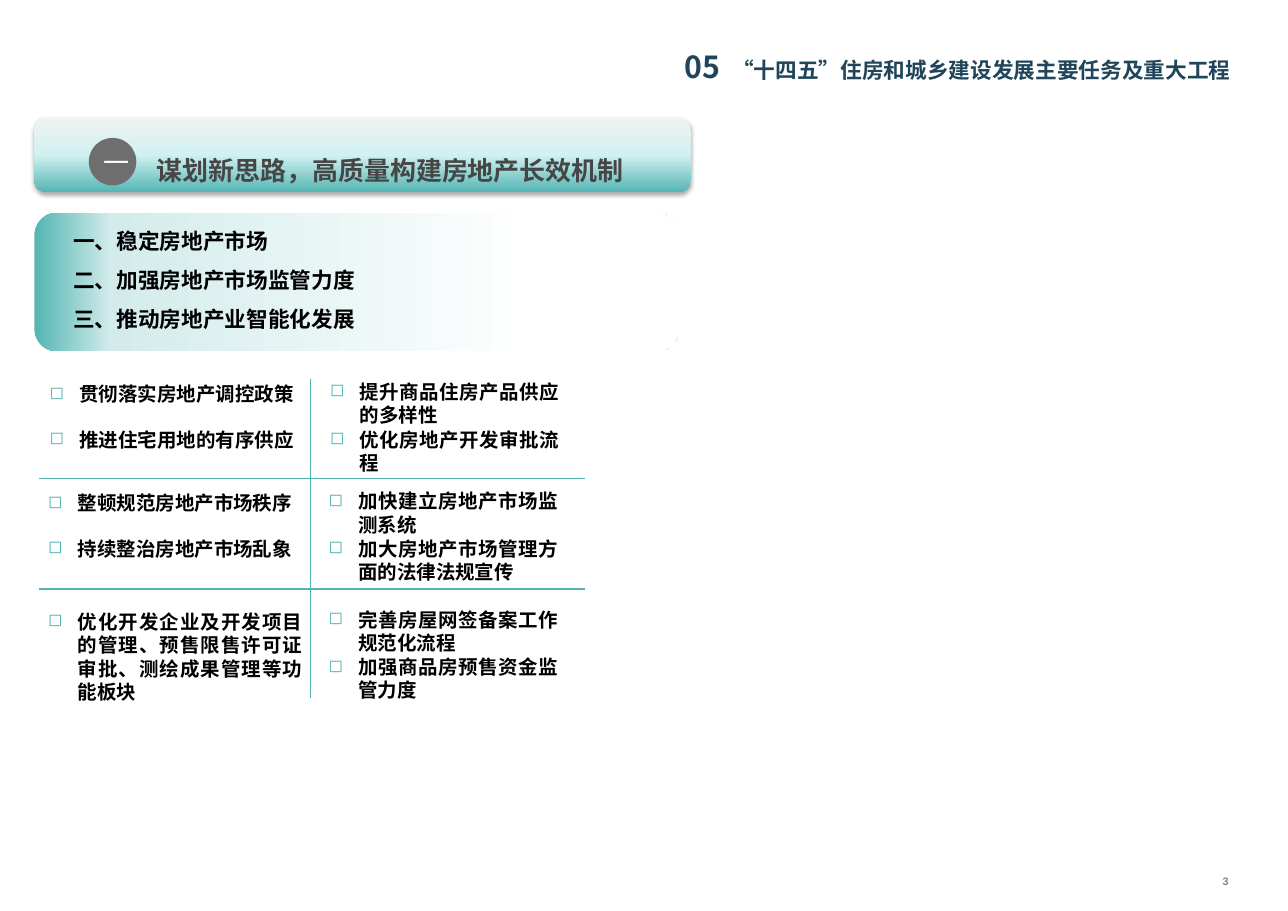
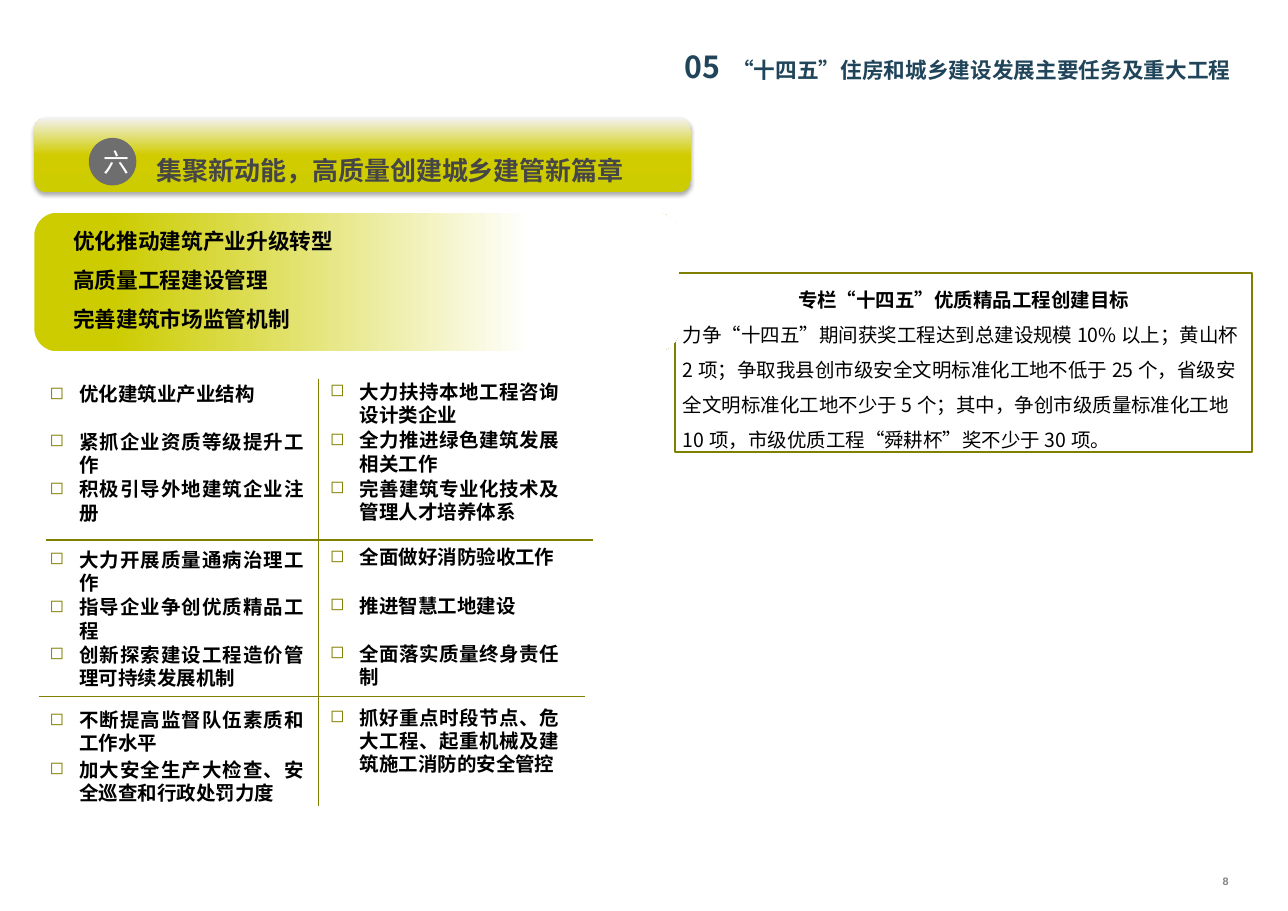
from dataclasses import dataclass
from typing import Any

from lxml.etree import SubElement
from pptx import Presentation
from pptx.dml.color import RGBColor
from pptx.enum.lang import MSO_LANGUAGE_ID
from pptx.enum.shapes import MSO_CONNECTOR, MSO_SHAPE
from pptx.enum.text import MSO_ANCHOR, MSO_AUTO_SIZE, PP_ALIGN
from pptx.oxml.ns import qn
from pptx.util import Inches, Pt

# Shared style; the page is A3, 420 by 297 millimetres
WIDE, HIGH = 420 / 25.4, 297 / 25.4
SANS, LATIN = "Noto Sans CJK SC", "Calibri"
NAVY, GRAY, DARK = "20455A", "6E6E6E", "464646"
BLACK, WHITE, PALE = "000000", "FFFFFF", "F2F2F2"
HEAD = "“十四五”住房和城乡建设发展主要任务及重大工程"
LEFT_WIDE, RIGHT_WIDE, SHIFT = 3.46, 3.14, 3.6
RISE, HANG = 0.03, 0.38

Rect = tuple[float, float, float, float]
Stops = list[tuple[int, str]]


@dataclass
class Run:
    text: str
    size: float
    color: str = BLACK
    bold: bool = True
    font: str = SANS


@dataclass
class Block:
    x: float
    top: float
    step: float
    gap: float
    left: list[str]
    right: list[str]


@dataclass
class Page:
    number: str
    mark: str
    title: str
    points: list[str]
    main: str
    band: Stops
    panel: Stops
    weight: float
    lines: list[Rect]
    blocks: list[Block]
    note: tuple[str, str] | None = None


PAGES = [
    Page(
        "3", "一", "谋划新思路，高质量构建房地产长效机制",
        ["一、稳定房地产市场", "二、加强房地产市场监管力度", "三、推动房地产业智能化发展"],
        "53B5B3",
        [(0, "53B5B3"), (50, "D1F1F1"), (100, PALE)],
        [(0, "53B5B3"), (12, "D3ECEB"), (77, WHITE)],
        1,
        [(0.5, 6.14, 7.51, 6.14), (3.99, 4.86, 3.99, 8.96), (0.5, 7.56, 7.51, 7.56)],
        [
            Block(0.54, 4.86, 0.58, 0.61,
                  ["贯彻落实房地产调控政策", "推进住宅用地的有序供应"],
                  ["提升商品住房产品供应的多样性", "优化房地产开发审批流程"]),
            Block(0.52, 6.26, 0.58, 0.61,
                  ["整顿规范房地产市场秩序", "持续整治房地产市场乱象"],
                  ["加快建立房地产市场监测系统", "加大房地产市场管理方面的法律法规宣传"]),
            Block(0.52, 7.78, 0.58, 0.61,
                  ["优化开发企业及开发项目的管理、预售限售许可证审批、测绘成果管理等功能板块"],
                  ["完善房屋网签备案工作规范化流程", "加强商品房预售资金监管力度"]),
        ],
    ),
    Page(
        "8", "六", "集聚新动能，高质量创建城乡建管新篇章",
        ["优化推动建筑产业升级转型", "高质量工程建设管理", "完善建筑市场监管机制"],
        "808000",
        [(0, "CCCC00"), (50, "D1CC00"), (100, PALE)],
        [(0, "CCCC00"), (12, "CCCC00"), (77, WHITE)],
        1.25,
        [(0.59, 6.93, 7.61, 6.93), (4.09, 4.86, 4.09, 10.35), (0.5, 8.94, 7.51, 8.94)],
        [
            Block(0.54, 4.86, 0.61, 0.62,
                  ["优化建筑业产业结构", "紧抓企业资质等级提升工作", "积极引导外地建筑企业注册"],
                  ["大力扶持本地工程咨询设计类企业", "全力推进绿色建筑发展相关工作",
                   "完善建筑专业化技术及管理人才培养体系"]),
            Block(0.54, 6.98, 0.61, 0.62,
                  ["大力开展质量通病治理工作", "指导企业争创优质精品工程",
                   "创新探索建设工程造价管理可持续发展机制"],
                  ["全面做好消防验收工作", "推进智慧工地建设", "全面落实质量终身责任制"]),
            Block(0.54, 9.04, 0.64, 0.62,
                  ["不断提高监督队伍素质和工作水平", "加大安全生产大检查、安全巡查和行政处罚力度"],
                  ["抓好重点时段节点、危大工程、起重机械及建筑施工消防的安全管控"]),
        ],
        ("专栏“十四五”优质精品工程创建目标",
         "力争“十四五”期间获奖工程达到总建设规模10%以上；黄山杯2项；"
         "争取我县创市级安全文明标准化工地不低于25个，省级安全文明标准化工地不少于5个；"
         "其中，争创市级质量标准化工地10项，市级优质工程“舜耕杯”奖不少于30项。"),
    ),
]


def paint(target: Any, color: str) -> None:
    target.rgb = RGBColor.from_string(color)


def apply(target: Any, form: dict[str, Any]) -> None:
    for name, value in form.items():
        setattr(target, name, value)


def node(parent: Any, tag: str, **values: Any) -> Any:
    return SubElement(parent, qn(tag), {key: str(val) for key, val in values.items()})


# Text
def write(para: Any, runs: list[Run], **form: Any) -> None:
    apply(para, form)
    for part in runs:
        run = para.add_run()
        run.text = part.text
        apply(run.font, {"size": Pt(part.size), "bold": part.bold, "name": part.font,
                         "language_id": MSO_LANGUAGE_ID.SIMPLIFIED_CHINESE})
        paint(run.font.color, part.color)
        node(run.font._element, "a:ea", typeface=SANS)


def fill_text(shape: Any, paras: list[list[Run]], frame: dict[str, Any], **form: Any) -> Any:
    body = shape.text_frame
    apply(body, {"word_wrap": True, "vertical_anchor": MSO_ANCHOR.TOP, **frame})
    for i, runs in enumerate(paras):
        write(body.add_paragraph() if i else body.paragraphs[0], runs, **form)
    return body


def label(slide: Any, at: Rect, paras: list[list[Run]],
          frame: dict[str, Any] | None = None, **form: Any) -> Any:
    box = slide.shapes.add_textbox(*map(Inches, at))
    grow = {"auto_size": MSO_AUTO_SIZE.SHAPE_TO_FIT_TEXT}
    return fill_text(box, paras, grow if frame is None else frame, **form)


def item(slide: Any, x: float, y: float, wide: float, text: str, color: str) -> None:
    body = label(slide, (x, y, wide, 0.4), [[Run(text, 18, font=LATIN)]],
                 alignment=PP_ALIGN.JUSTIFY)
    props = body.paragraphs[0]._p.get_or_add_pPr()
    for key, value in {"marL": Inches(HANG), "indent": -Inches(HANG)}.items():
        props.set(key, str(value))
    node(node(props, "a:buClr"), "a:srgbClr", val=color)
    node(props, "a:buSzPct", val=90000)
    node(props, "a:buChar", char="◻")


# Shapes
def block(slide: Any, kind: Any, at: Rect, color: str | None = None) -> Any:
    shape = slide.shapes.add_shape(kind, *map(Inches, at))
    shape.shadow.inherit = False
    shape.line.fill.background()
    if color:
        shape.fill.solid()
        paint(shape.fill.fore_color, color)
    return shape


def blend(shape: Any, stops: Stops, angle: int) -> None:
    shape.fill.gradient()
    grad = shape._element.spPr.find(qn("a:gradFill"))
    for child in list(grad):
        grad.remove(child)
    chain = node(grad, "a:gsLst")
    for place, color in stops:
        node(node(chain, "a:gs", pos=place * 1000), "a:srgbClr", val=color)
    node(grad, "a:lin", ang=angle * 60000, scaled=0)


def shade(shape: Any) -> None:
    effects = shape._element.spPr.find(qn("a:effectLst"))
    outer = node(effects, "a:outerShdw", blurRad=Pt(3.5), dist=Pt(2.2),
                 dir=90 * 60000, rotWithShape=0)
    node(node(outer, "a:srgbClr", val=BLACK), "a:alpha", val=32000)


def rule(slide: Any, ends: Rect, color: str, weight: float) -> None:
    line = slide.shapes.add_connector(MSO_CONNECTOR.STRAIGHT, *map(Inches, ends))
    paint(line.line.color, color)
    line.line.width = Pt(weight)
    node(line._element.spPr, "a:effectLst")


# Slide parts
def header(slide: Any, page: Page) -> None:
    label(slide, (14.91, 11.06, 1.65, 0.49),
          [[Run(page.number, 10, "838383", font="Arial")]],
          {"vertical_anchor": MSO_ANCHOR.MIDDLE}, alignment=PP_ALIGN.CENTER)
    edges = {"margin_left": Inches(0.16), "margin_right": Inches(0.16),
             "margin_top": 0, "margin_bottom": 0}
    label(slide, (0.59, 0.5, 15.37, 0.5),
          [[Run("05", 28, NAVY), Run(" ", 24, NAVY), Run(HEAD, 20, NAVY)]],
          edges, alignment=PP_ALIGN.RIGHT, line_spacing=1.25)


def sidebar(slide: Any, page: Page) -> None:
    if page.note is None:
        return
    box = block(slide, MSO_SHAPE.RECTANGLE, (8.67, 3.5, 7.4, 2.3), WHITE)
    paint(box.line.color, page.main)
    box.line.width = Pt(2)
    title, text = page.note
    body = fill_text(box, [[Run(title, 18)], [Run(text, 18, bold=False)]], {},
                     line_spacing=1.5, alignment=PP_ALIGN.LEFT)
    body.paragraphs[0].alignment = PP_ALIGN.CENTER


def banner(slide: Any, page: Page) -> None:
    band = block(slide, MSO_SHAPE.ROUNDED_RECTANGLE, (0.44, 1.51, 8.43, 0.96))
    blend(band, page.band, 270)
    shade(band)
    label(slide, (1.91, 1.65, 6.67, 0.68), [[Run(page.title, 24, DARK)]],
          alignment=PP_ALIGN.JUSTIFY, line_spacing=1.72,
          space_before=Pt(10), space_after=Pt(10))
    badge = block(slide, MSO_SHAPE.OVAL, (1.14, 1.77, 0.61, 0.61), GRAY)
    fill_text(badge, [[Run(page.mark, 24, WHITE, False, LATIN)]],
              {"vertical_anchor": MSO_ANCHOR.MIDDLE}, alignment=PP_ALIGN.CENTER)


def summary(slide: Any, page: Page) -> None:
    panel = block(slide, MSO_SHAPE.ROUNDED_RECTANGLE, (0.44, 2.73, 8.28, 1.78))
    blend(panel, page.panel, 0)
    label(slide, (0.84, 2.71, 8.03, 1.54), [[Run(text, 20)] for text in page.points],
          alignment=PP_ALIGN.JUSTIFY, line_spacing=1.5)


def tasks(slide: Any, page: Page) -> None:
    for ends in page.lines:
        rule(slide, ends, page.main, page.weight)
    for part in page.blocks:
        for i, text in enumerate(part.left):
            item(slide, part.x, part.top + i * part.step, LEFT_WIDE, text, page.main)
        for i, text in enumerate(part.right):
            item(slide, part.x + SHIFT, part.top - RISE + i * part.gap,
                 RIGHT_WIDE, text, page.main)


def main() -> None:
    deck = Presentation()
    deck.slide_width = Inches(WIDE)
    deck.slide_height = Inches(HIGH)
    for page in PAGES:
        slide = deck.slides.add_slide(deck.slide_layouts[6])
        for draw in (header, sidebar, banner, summary, tasks):
            draw(slide, page)
    deck.save("out.pptx")


if __name__ == "__main__":
    main()
